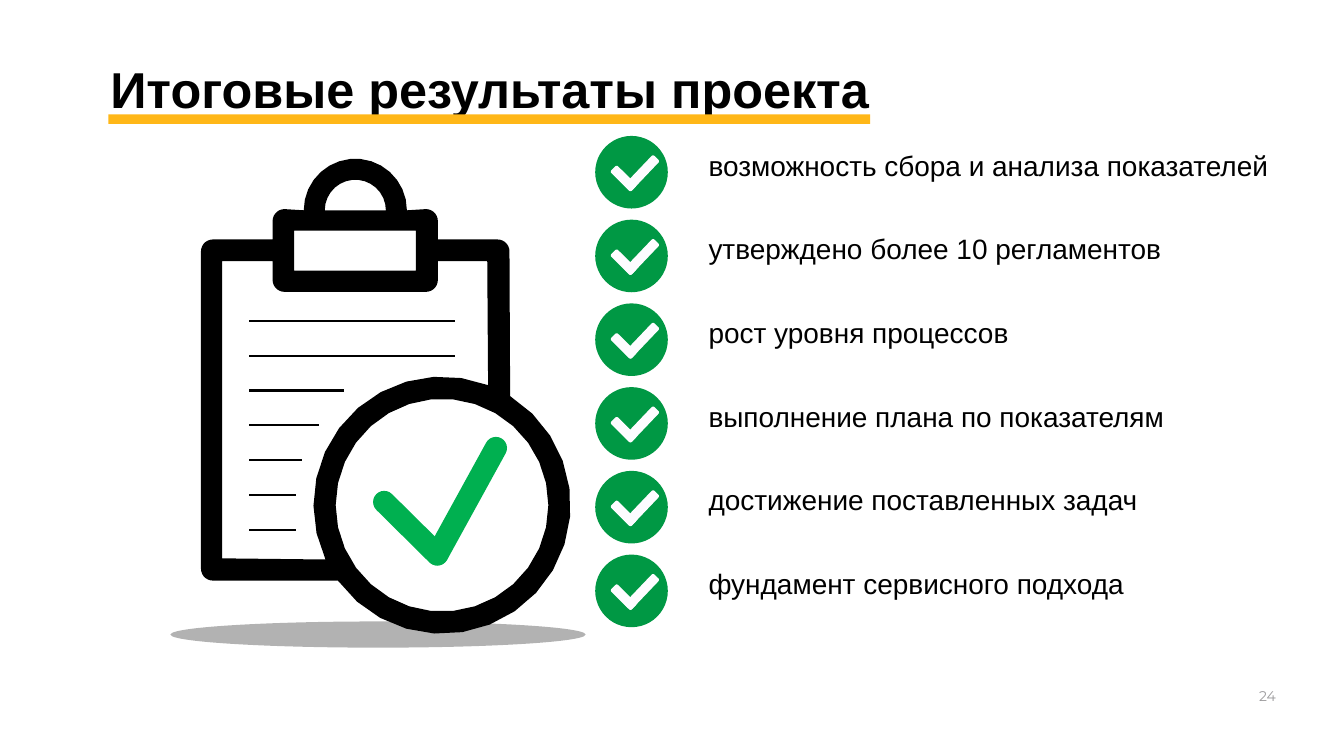
from dataclasses import dataclass
from math import cos, radians, sin

from lxml.etree import SubElement
from pptx import Presentation
from pptx.dml.color import RGBColor
from pptx.enum.shapes import MSO_CONNECTOR, MSO_SHAPE
from pptx.enum.text import MSO_ANCHOR, MSO_AUTO_SIZE, PP_ALIGN
from pptx.oxml.ns import qn
from pptx.util import Cm, Pt

Point = tuple[float, float]

BLACK, YELLOW, GRAY = "000000", "FFB718", "9B9A9C"
BADGE_GREEN, TICK_GREEN, TICK_WHITE = "009844", "00B050", "FDFCFF"
RESULTS = [
    "возможность сбора и анализа показателей",
    "утверждено более 10 регламентов",
    "рост уровня процессов",
    "выполнение плана по показателям",
    "достижение поставленных задач",
    "фундамент сервисного подхода",
]
BADGE_LEFT, BADGE_TOP, BADGE_SIZE, ROW_PITCH = 30, 6.85, 3.66, 4.22
NOTE_LEFT, NOTE_TOP, NOTE_PITCH = 12.57, 16.16, 1.76
NOTE_RIGHTS = [22.91, 22.91, 17.32, 16.1, 15.21, 14.94, 14.94]


@dataclass
class Box:
    """Place and size in centimetres."""
    left: float
    top: float
    width: float
    height: float

    def lengths(self) -> tuple[Cm, Cm, Cm, Cm]:
        return Cm(self.left), Cm(self.top), Cm(self.width), Cm(self.height)


@dataclass
class Stroke:
    """One rounded bar of a tick."""
    box: Box
    rotation: float
    roundness: float


BADGE_STROKES = [
    Stroke(Box(1.19, 1.42, 0.48, 1.45), 314.7, 0.19),
    Stroke(Box(2.11, 0.81, 0.48, 2.13), 43.6, 0.21),
]
BIG_STROKES = [
    Stroke(Box(20.14, 24.18, 1.12, 4.88), 314.7, 0.5),
    Stroke(Box(22.96, 21.64, 1.12, 7.24), 28.8, 0.5),
]


def color(value: str) -> RGBColor:
    return RGBColor.from_string(value)


def paint(shape, fill: str):
    """Give a plain fill without outline or shadow."""
    shape.fill.solid()
    shape.fill.fore_color.rgb = color(fill)
    shape.line.fill.background()
    shape.shadow.inherit = False
    return shape


def add_filled(slide, kind: MSO_SHAPE, box: Box, fill: str):
    return paint(slide.shapes.add_shape(kind, *box.lengths()), fill)


def add_tick(slide, strokes: list[Stroke], fill: str, left: float = 0, top: float = 0) -> None:
    for stroke in strokes:
        box = stroke.box
        moved = Box(left + box.left, top + box.top, box.width, box.height)
        shape = add_filled(slide, MSO_SHAPE.ROUNDED_RECTANGLE, moved, fill)
        shape.adjustments[0] = stroke.roundness
        shape.rotation = stroke.rotation


def place(shape, box: Box) -> None:
    shape.left, shape.top, shape.width, shape.height = box.lengths()


def format_text(shape, size: float, font: str, fill: str, align: PP_ALIGN,
                inset_x: float, inset_y: float, bold: bool = False) -> None:
    frame = shape.text_frame
    frame.word_wrap = True
    frame.auto_size = MSO_AUTO_SIZE.NONE
    frame.vertical_anchor = MSO_ANCHOR.TOP
    frame.margin_left = frame.margin_right = Cm(inset_x)
    frame.margin_top = frame.margin_bottom = Cm(inset_y)
    for paragraph in frame.paragraphs:
        paragraph.alignment = align
        for run in paragraph.runs:
            run.font.size, run.font.name, run.font.bold = Pt(size), font, bold
            run.font.color.rgb = color(fill)


def arc(center: Point, radius: float, start: int, end: int) -> list[Point]:
    """Points along an arc; angles in degrees, clockwise from the right."""
    steps = max(3, abs(end - start) // 12)
    angles = [radians(start + (end - start) * i / steps) for i in range(steps + 1)]
    return [(center[0] + radius * cos(a), center[1] + radius * sin(a)) for a in angles]


def clipboard_contours() -> list[list[Point]]:
    left, top, right, bottom = 10.13, 12.07, 25.68, 29.26
    clip_left, clip_top, clip_right, clip_bottom = 13.74, 10.54, 22.07, 14.71
    corner, ring, handle = 0.6, (22.28, 25.46), (17.91, 10.6)
    ring_outer, ring_inner = 6.48, 5.36
    silhouette = [
        *arc((left + corner, top + corner), corner, 180, 270),
        (clip_left, top),
        *arc((clip_left + corner, clip_top + corner), corner, 180, 270),
        *arc(handle, 2.6, 180, 360),
        *arc((clip_right - corner, clip_top + corner), corner, 270, 360),
        (clip_right, top),
        *arc((right - corner, top + corner), corner, 270, 360),
        *arc(ring, ring_outer, -58, 144),
        *arc((left + corner, bottom - corner), corner, 90, 180),
    ]
    sheet = [
        (11.2, 13.16), (clip_left, 13.16),
        *arc((clip_left + corner, clip_bottom - corner), corner, 180, 90),
        *arc((clip_right - corner, clip_bottom - corner), corner, 90, 0),
        (clip_right, 13.16), (24.56, 13.16),
        *arc(ring, ring_outer, -69, -205),
        (11.2, 28.14),
    ]
    clip_hole = [(14.83, 11.63), (20.96, 11.63), (20.96, 13.64), (14.83, 13.64)]
    return [silhouette, sheet, clip_hole, arc(handle, 1.54, 180, 360),
            arc(ring, ring_inner, 0, 360)]


def add_outline(slide, contours: list[list[Point]], fill: str) -> None:
    """Draw one shape whose later contours are holes in the first."""
    scaled = [[(Cm(x), Cm(y)) for x, y in contour] for contour in contours]
    builder = slide.shapes.build_freeform(*scaled[0][0])
    for index, contour in enumerate(scaled):
        if index:
            builder.move_to(*contour[0])
        builder.add_line_segments(contour[1:], close=True)
    paint(builder.convert_to_shape(), fill)


def add_note_line(slide, right: float, y: float) -> None:
    line = slide.shapes.add_connector(
        MSO_CONNECTOR.STRAIGHT, Cm(NOTE_LEFT), Cm(y), Cm(right), Cm(y))
    line.line.color.rgb = color(BLACK)
    line.line.width = Pt(3)
    SubElement(line._element.spPr, qn("a:effectLst"))


def add_headline(slide) -> None:
    title = slide.shapes.title
    place(title, Box(5.46, 2.24, 43.41, 4.39))
    title.text_frame.text = "Итоговые результаты проекта"
    title.text_frame.paragraphs[0].line_spacing = 1.2
    format_text(title, 72, "Arial", BLACK, PP_ALIGN.LEFT, 0.1, 0.1, bold=True)
    add_filled(slide, MSO_SHAPE.RECTANGLE, Box(5.46, 5.77, 38.4, 0.48), YELLOW)


def add_results(slide) -> None:
    body = slide.placeholders[1]
    place(body, Box(35.2, 7.21, 32.54, 23.35))
    body.text_frame.text = "\n".join(RESULTS)
    format_text(body, 40, "Arial", BLACK, PP_ALIGN.LEFT, 0.51, 0.25)
    for row, paragraph in enumerate(body.text_frame.paragraphs):
        paragraph.line_spacing = 1.0
        paragraph.space_before, paragraph.space_after = Pt(0), Pt(71.6)
        properties = paragraph._p.get_or_add_pPr()
        properties.set("marL", "0")
        properties.set("indent", "0")
        SubElement(properties, qn("a:buNone"))
        top = BADGE_TOP + row * ROW_PITCH
        add_filled(slide, MSO_SHAPE.OVAL, Box(BADGE_LEFT, top, BADGE_SIZE, BADGE_SIZE), BADGE_GREEN)
        add_tick(slide, BADGE_STROKES, TICK_WHITE, BADGE_LEFT, top)


def add_clipboard(slide) -> None:
    ground = add_filled(slide, MSO_SHAPE.OVAL, Box(8.59, 31.32, 20.93, 1.32), BLACK)
    shade = ground._element.spPr.find(qn("a:solidFill")).find(qn("a:srgbClr"))
    SubElement(shade, qn("a:alpha"), val="30000")
    add_outline(slide, clipboard_contours(), BLACK)
    for row, right in enumerate(NOTE_RIGHTS):
        add_note_line(slide, right, NOTE_TOP + row * NOTE_PITCH)
    add_tick(slide, BIG_STROKES, TICK_GREEN)


def main() -> None:
    presentation = Presentation()
    presentation.slide_width, presentation.slide_height = Cm(67.74), Cm(38.1)
    slide = presentation.slides.add_slide(presentation.slide_layouts[1])
    add_headline(slide)
    add_clipboard(slide)
    add_results(slide)
    number = slide.shapes.add_textbox(*Box(62.64, 34.57, 2.49, 1.07).lengths())
    number.text_frame.text = "24"
    format_text(number, 20, "Montserrat", GRAY, PP_ALIGN.CENTER, 0.1, 0.1)
    presentation.save("out.pptx")


if __name__ == "__main__":
    main()
